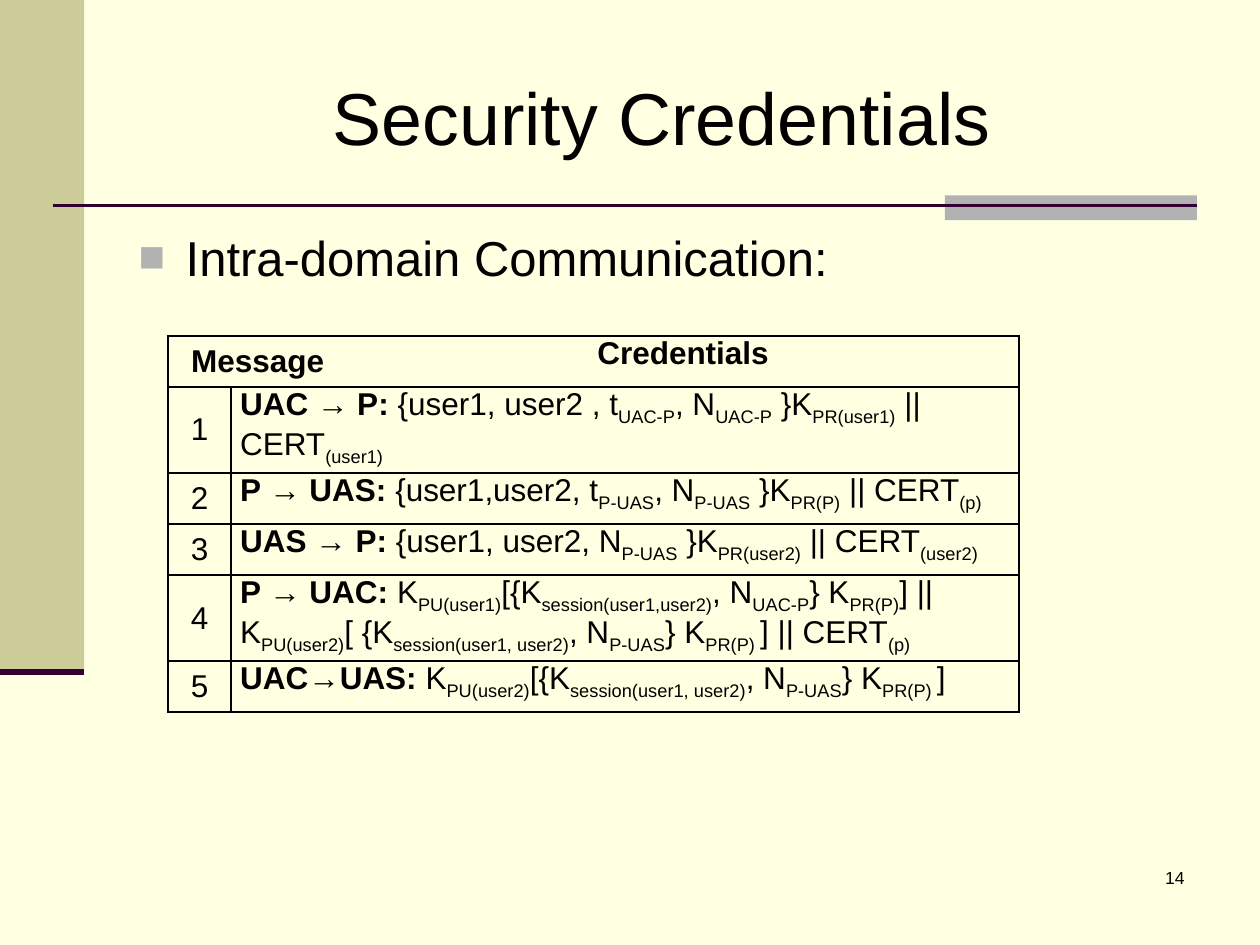
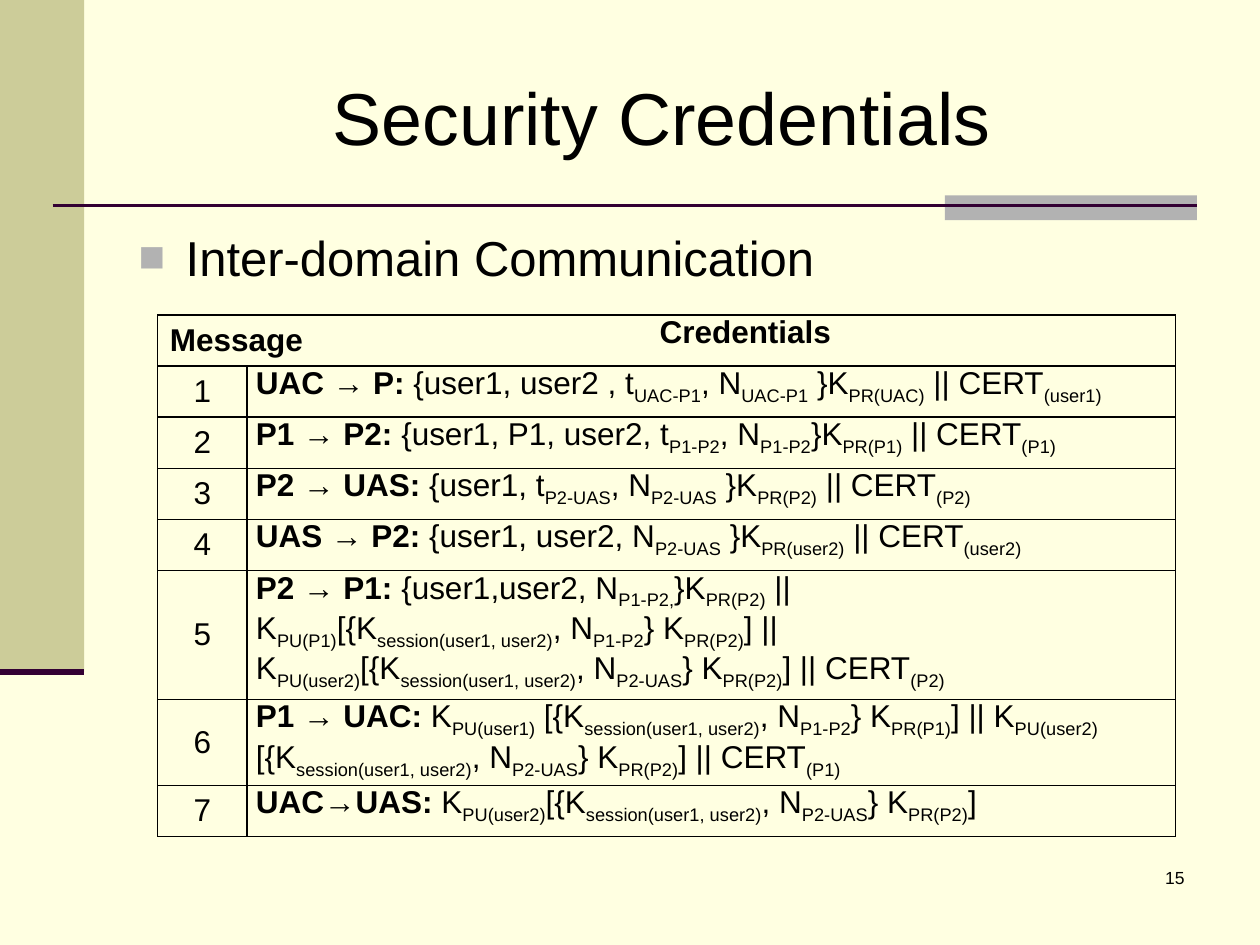
from dataclasses import dataclass

from lxml import etree
from pptx import Presentation
from pptx import util as u
from pptx.dml.color import RGBColor
from pptx.enum import shapes, text
from pptx.oxml import ns


@dataclass(frozen=True)
class Theme:
    font: str = "Arial"
    background: str = "FFFFE1"
    band: str = "CCCC99"
    accent: str = "B2B2B2"
    rule: str = "330033"
    ink: str = "000000"
    title_size: float = 42
    body_size: float = 28
    table_size: float = 18
    number_size: float = 10
    rule_width: float = 1.5
    band_rule_width: float = 3.5
    border_width: float = 1
    subscript: int = -25000


@dataclass(frozen=True)
class Box:
    left: float
    top: float
    width: float
    height: float

    def lengths(self):
        return [u.Cm(value) for value in (self.left, self.top, self.width, self.height)]


THEME = Theme()
PAGE = Box(0, 0, 25.4, 19.05)
TITLE = Box(2.54, 0.76, 21.59, 3.18)
BODY = Box(2.54, 4.45, 21.59, 12.57)
NUMBER = Box(18.85, 17.35, 5.28, 1.27)
ROW_HEIGHT = 1.03
CELL_INSET = 0.18

INTRA_DOMAIN = [
    ("UAC → P: ", ["{user1, user2 , t_UAC-P_, N_UAC-P_ }K_PR(user1)_ || CERT_(user1)"]),
    ("P → UAS: ", ["{user1,user2, t_P-UAS_, N_P-UAS_ }K_PR(P)_ || CERT_(p)"]),
    ("UAS → P: ", ["{user1, user2, N_P-UAS_ }K_PR(user2)_ || CERT_(user2)"]),
    ("P → UAC: ", ["K_PU(user1)_[{K_session(user1,user2)_, N_UAC-P_} K_PR(P)_] || "
                   "K_PU(user2)_[ {K_session(user1, user2)_, N_P-UAS_} K_PR(P) _] || CERT_(p)"]),
    ("UAC→UAS:", [" K_PU(user2)_[{K_session(user1, user2)_, N_P-UAS_} K_PR(P) _]"]),
]
INTER_DOMAIN = [
    ("UAC → P: ", ["{user1, user2 , t_UAC-P1_, N_UAC-P1_ }K_PR(UAC)_ || CERT_(user1)"]),
    ("P1 → P2: ", ["{user1, P1, user2, t_P1-P2_, N_P1-P2_}K_PR(P1)_ || CERT_(P1)"]),
    ("P2 → UAS: ", ["{user1, t_P2-UAS_, N_P2-UAS_ }K_PR(P2)_ || CERT_(P2)"]),
    ("UAS → P2: ", ["{user1, user2, N_P2-UAS_ }K_PR(user2)_ || CERT_(user2)"]),
    ("P2 → P1: ", ["{user1,user2, N_P1-P2,_}K_PR(P2)_ ||",
                   "K_PU(P1)_[{K_session(user1, user2)_, N_P1-P2_} K_PR(P2)_] ||",
                   "K_PU(user2)_[{K_session(user1, user2)_, N_P2-UAS_} K_PR(P2)_] || CERT_(P2)"]),
    ("P1 → UAC: ", ["K_PU(user1)_ [{K_session(user1, user2)_, N_P1-P2_} K_PR(P1)_] || K_PU(user2)_"
                    "[{K_session(user1, user2)_, N_P2-UAS_} K_PR(P2)_] || CERT_(P1)"]),
    ("UAC→UAS: ", ["K_PU(user2)_[{K_session(user1, user2)_, N_P2-UAS_} K_PR(P2)_]"]),
]


def add_run(paragraph, content, size, bold=False, subscript=False):
    run = paragraph.add_run()
    run.text = content
    run.font.name = THEME.font
    run.font.size = u.Pt(size)
    run.font.bold = bold
    run.font.color.rgb = RGBColor.from_string(THEME.ink)
    if subscript:
        run.font._element.set("baseline", str(THEME.subscript))


def add_formula(paragraph, formula):
    for index, part in enumerate(formula.split("_")):
        if part:
            add_run(paragraph, part, THEME.table_size, subscript=index % 2 == 1)


def add_block(slide, box, color):
    block = slide.shapes.add_shape(shapes.MSO_SHAPE.RECTANGLE, *box.lengths())
    block.shadow.inherit = False
    block.fill.solid()
    block.fill.fore_color.rgb = RGBColor.from_string(color)
    block.line.fill.background()


def add_rule(slide, left, right, top, width):
    rule = slide.shapes.add_connector(
        shapes.MSO_CONNECTOR.STRAIGHT, u.Cm(left), u.Cm(top), u.Cm(right), u.Cm(top))
    rule.line.color.rgb = RGBColor.from_string(THEME.rule)
    rule.line.width = u.Pt(width)
    etree.SubElement(rule._element.spPr, ns.qn("a:effectLst"))


def add_decoration(slide, page):
    band = Box(page.left, page.top, 1.7, 13.55)
    right = page.left + page.width - 1.27
    add_block(slide, band, THEME.band)
    add_block(slide, Box(right - 5.08, page.top + 3.94, 5.08, 0.5), THEME.accent)
    add_rule(slide, page.left + 1.06, right, page.top + 4.14, THEME.rule_width)
    add_rule(slide, band.left, band.left + band.width, band.top + band.height,
             THEME.band_rule_width)


def place_placeholder(placeholder, box, anchor):
    placeholder.left, placeholder.top, placeholder.width, placeholder.height = box.lengths()
    frame = placeholder.text_frame
    frame.auto_size = text.MSO_AUTO_SIZE.NONE
    frame.vertical_anchor = anchor
    return frame.paragraphs[0]


def fill_title(slide, box, content):
    paragraph = place_placeholder(slide.shapes.title, box, text.MSO_ANCHOR.MIDDLE)
    paragraph.alignment = text.PP_ALIGN.CENTER
    add_run(paragraph, content, THEME.title_size)


def fill_body(slide, box, content):
    paragraph = place_placeholder(slide.placeholders[1], box, text.MSO_ANCHOR.TOP)
    paragraph.space_before = u.Pt(THEME.body_size * 0.2)
    properties = paragraph._p.get_or_add_pPr()
    indent = u.Cm(0.95)
    properties.set("marL", str(indent))
    properties.set("indent", str(-indent))
    bullet_color = etree.SubElement(properties, ns.qn("a:buClr"))
    etree.SubElement(bullet_color, ns.qn("a:srgbClr"), val=THEME.accent)
    etree.SubElement(properties, ns.qn("a:buSzPct"), val="90000")
    etree.SubElement(properties, ns.qn("a:buFont"), typeface=THEME.font)
    etree.SubElement(properties, ns.qn("a:buChar"), char="■")
    add_run(paragraph, content, THEME.body_size)


def add_page_number(slide, box, number):
    frame = slide.shapes.add_textbox(*box.lengths()).text_frame
    frame.word_wrap = True
    paragraph = frame.paragraphs[0]
    paragraph.alignment = text.PP_ALIGN.RIGHT
    add_run(paragraph, str(number), THEME.number_size)


def format_cell(cell, hidden_sides):
    cell.margin_left = cell.margin_right = u.Cm(CELL_INSET)
    cell.margin_top = cell.margin_bottom = 0
    properties = cell._tc.get_or_add_tcPr()
    for side in "LRTB":
        border = etree.SubElement(properties, ns.qn(f"a:ln{side}"),
                                  w=str(u.Pt(THEME.border_width)))
        if side in hidden_sides:
            etree.SubElement(border, ns.qn("a:noFill"))
        else:
            fill = etree.SubElement(border, ns.qn("a:solidFill"))
            etree.SubElement(fill, ns.qn("a:srgbClr"), val=THEME.ink)
    cell.fill.background()


def write_centered(cell, content, bold=False, anchor=text.MSO_ANCHOR.MIDDLE):
    cell.vertical_anchor = anchor
    paragraph = cell.text_frame.paragraphs[0]
    paragraph.alignment = text.PP_ALIGN.CENTER
    add_run(paragraph, content, THEME.table_size, bold)


def write_credentials(cell, route, formulas):
    frame = cell.text_frame
    for index, formula in enumerate(formulas):
        paragraph = frame.add_paragraph() if index else frame.paragraphs[0]
        if index == 0:
            add_run(paragraph, route, THEME.table_size, bold=True)
        add_formula(paragraph, formula)


def add_message_table(slide, left, top, column_widths, messages):
    row_count = len(messages) + 1
    box = Box(left, top, sum(column_widths), row_count * ROW_HEIGHT)
    table = slide.shapes.add_table(row_count, len(column_widths), *box.lengths()).table
    table.first_row = table.horz_banding = False
    for column, width in zip(table.columns, column_widths):
        column.width = u.Cm(width)
    for row_index, row in enumerate(table.rows):
        row.height = u.Cm(ROW_HEIGHT)
        for cell, header_gaps in zip(row.cells, ("R", "LR", "L")):
            format_cell(cell, header_gaps if row_index == 0 else "")
    table.cell(0, 0).merge(table.cell(0, 1))
    write_centered(table.cell(0, 0), "Message", bold=True)
    write_centered(table.cell(0, 2), "Credentials", bold=True, anchor=text.MSO_ANCHOR.TOP)
    for number, (route, formulas) in enumerate(messages, start=1):
        table.cell(number, 1).merge(table.cell(number, 2))
        write_centered(table.cell(number, 0), str(number))
        write_credentials(table.cell(number, 1), route, formulas)


def add_credentials_slide(presentation, number, topic, left, top, column_widths, messages):
    slide = presentation.slides.add_slide(presentation.slide_layouts[1])
    add_decoration(slide, PAGE)
    fill_title(slide, TITLE, "Security Credentials")
    fill_body(slide, BODY, topic)
    add_page_number(slide, NUMBER, number)
    add_message_table(slide, left, top, column_widths, messages)


def main():
    presentation = Presentation()
    presentation.slide_width = u.Cm(PAGE.width)
    presentation.slide_height = u.Cm(PAGE.height)
    background = presentation.slide_master.background.fill
    background.solid()
    background.fore_color.rgb = RGBColor.from_string(THEME.background)
    add_credentials_slide(presentation, 14, "Intra-domain Communication:",
                          3.39, 6.77, (1.27, 2.34, 13.54), INTRA_DOMAIN)
    add_credentials_slide(presentation, 15, "Inter-domain Communication",
                          3.18, 6.35, (1.8, 1.37, 17.35), INTER_DOMAIN)
    presentation.save("out.pptx")


if __name__ == "__main__":
    main()
